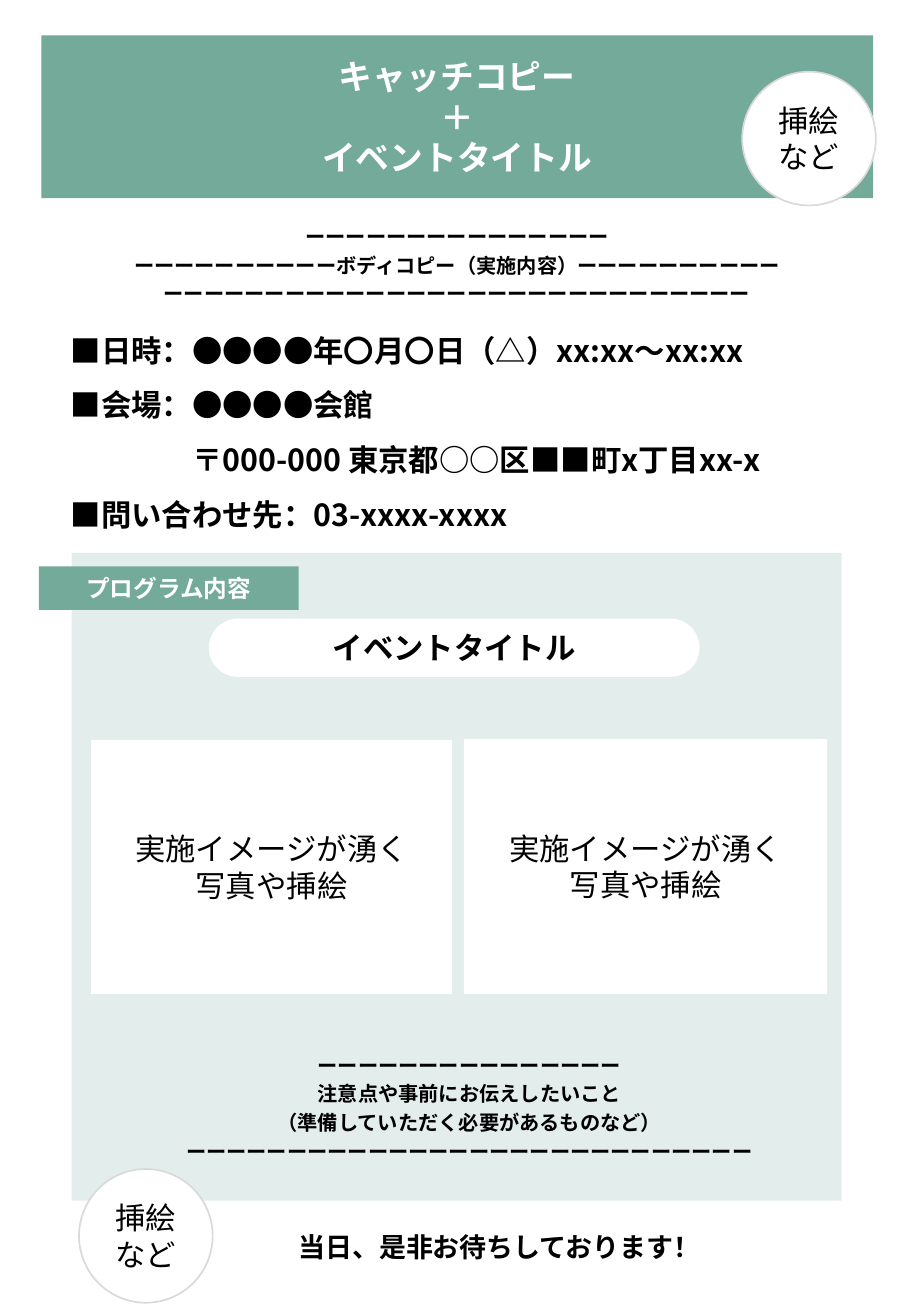
from dataclasses import dataclass

from lxml import etree
from pptx import Presentation
from pptx.dml.color import RGBColor
from pptx.enum.shapes import MSO_SHAPE
from pptx.enum.text import MSO_ANCHOR, MSO_AUTO_SIZE, PP_ALIGN
from pptx.oxml.ns import qn
from pptx.util import Inches, Length, Pt

RECT, ROUND, OVAL = MSO_SHAPE.RECTANGLE, MSO_SHAPE.ROUNDED_RECTANGLE, MSO_SHAPE.OVAL
LEFT, CENTER = PP_ALIGN.LEFT, PP_ALIGN.CENTER
TOP, MIDDLE = MSO_ANCHOR.TOP, MSO_ANCHOR.MIDDLE
FIXED = MSO_AUTO_SIZE.NONE

GREEN = RGBColor(0x74, 0xAA, 0x9A)
PALE = RGBColor(0xE3, 0xED, 0xEB)
GREY = RGBColor(0xD9, 0xD9, 0xD9)
WHITE = RGBColor(0xFF, 0xFF, 0xFF)
BLACK = RGBColor(0x00, 0x00, 0x00)

NOTO, LATIN = "Noto Sans CJK JP", "Calibri"
WIDTH, HEIGHT = Inches(7.5), Inches(10.83)
DASH = "ー"


@dataclass(frozen=True)
class Box:
    """A frame in percent of the slide's width (x, w) and height (y, h)."""
    x: float
    y: float
    w: float
    h: float

    def frame(self) -> tuple[int, int, int, int]:
        return (round(WIDTH * self.x / 100), round(HEIGHT * self.y / 100),
                round(WIDTH * self.w / 100), round(HEIGHT * self.h / 100))


@dataclass(frozen=True)
class Style:
    size: int
    color: RGBColor = BLACK
    bold: bool = True
    font: str = NOTO
    align: PP_ALIGN = CENTER
    anchor: MSO_ANCHOR = MIDDLE
    space: float | Length = 1.0
    inset: int | None = None


@dataclass(frozen=True)
class Block:
    kind: MSO_SHAPE
    box: Box
    fill: RGBColor
    lines: tuple[str, ...] = ()
    style: Style | None = None
    edge: RGBColor | None = None


@dataclass(frozen=True)
class Note:
    box: Box
    lines: tuple[str, ...]
    style: Style


HEAD = Style(20, WHITE)
FACTS = Style(18, align=LEFT, anchor=TOP, space=1.5, inset=3)
COPY = Style(12, anchor=TOP, space=Pt(17), inset=2)
HINT = Style(12, anchor=TOP, space=Pt(17))
CLOSE = Style(16, align=LEFT, anchor=TOP, space=Pt(17), inset=2)
PILL = Style(18, font=LATIN)
TAG = Style(14, WHITE)
PLAIN = Style(18, bold=False, font=LATIN)

TITLE_BOX = Box(4.53, 2.68, 91.33, 12.37)
TITLE = ("キャッチコピー", "＋", "イベントタイトル")
FACT_BOX = Box(7.2, 23.45, 88.67, 17.08)
FACT_LINES = (
    "■日時：●●●●年〇月〇日（△）xx:xx～xx:xx",
    "■会場：●●●●会館",
    "〒000-000 東京都○○区■■町x丁目xx-x",
    "■問い合わせ先：03-xxxx-xxxx",
)
ADDRESS = 2  # the line set in under the venue
PHOTO = ("実施イメージが湧く", "写真や挿絵")
ART = ("挿絵など",)

BLOCKS = (
    Block(RECT, Box(7.87, 42.01, 84.53, 49.22), PALE),
    Block(ROUND, Box(22.93, 47, 53.87, 4.43), WHITE, ("イベントタイトル",), PILL),
    Block(RECT, Box(4.27, 43.03, 28.53, 3.32), GREEN, ("プログラム内容",), TAG),
    Block(RECT, Box(10, 56.23, 39.6, 19.3), WHITE, PHOTO, PLAIN),
    Block(RECT, Box(50.93, 56.14, 39.87, 19.39), WHITE, PHOTO, PLAIN),
    Block(OVAL, Box(81.47, 5.45, 14.67, 10.16), WHITE, ART, PLAIN, GREY),
    Block(OVAL, Box(8.67, 88.83, 14.67, 10.16), WHITE, ART, PLAIN, GREY),
)
NOTES = (
    Note(Box(4.53, 16.44, 91.33, 7.02),
         (DASH * 15, DASH * 10 + "ボディコピー（実施内容）" + DASH * 10, DASH * 29), COPY),
    Note(Box(6.8, 79.22, 89.47, 9.6),
         (DASH * 15, "注意点や事前にお伝えしたいこと",
          "（準備していただく必要があるものなど）", DASH * 28), HINT),
    Note(Box(32.4, 93.54, 65.33, 2.77), ("当日、是非お待ちしております！",), CLOSE),
)


def write(frame, lines: tuple[str, ...], style: Style) -> None:
    frame.word_wrap = True
    frame.auto_size = FIXED
    frame.vertical_anchor = style.anchor
    if style.inset is not None:
        frame.margin_left = frame.margin_right = Pt(style.inset)
        frame.margin_top = frame.margin_bottom = Pt(style.inset)
    for i, line in enumerate(lines):
        para = frame.paragraphs[0] if i == 0 else frame.add_paragraph()
        para.alignment = style.align
        para.line_spacing = style.space
        para.space_before = para.space_after = Pt(0)
        run = para.add_run()
        run.text = line
        font = run.font
        font.name, font.size, font.bold = style.font, Pt(style.size), style.bold
        font.color.rgb = style.color
        etree.SubElement(run._r.get_or_add_rPr(), qn("a:ea"), typeface=NOTO)


def place(shape, box: Box) -> None:
    shape.left, shape.top, shape.width, shape.height = box.frame()


def set_in(para, left: Length) -> None:
    """Drop the bullet and start the line at the given indent."""
    props = para._p.get_or_add_pPr()
    props.set("marL", str(int(left)))
    props.set("indent", "0")
    etree.SubElement(props, qn("a:buNone"))


def draw_block(slide, block: Block) -> None:
    shape = slide.shapes.add_shape(block.kind, *block.box.frame())
    shape.shadow.inherit = False
    shape.fill.solid()
    shape.fill.fore_color.rgb = block.fill
    if block.edge is None:
        shape.line.fill.background()
    else:
        shape.line.color.rgb = block.edge
        shape.line.width = Pt(1)
    if block.kind == ROUND:
        shape.adjustments[0] = 0.5
    if block.style:
        write(shape.text_frame, block.lines, block.style)


def draw_note(slide, note: Note) -> None:
    area = slide.shapes.add_textbox(*note.box.frame())
    write(area.text_frame, note.lines, note.style)


def draw_title(slide) -> None:
    title = slide.shapes.title
    place(title, TITLE_BOX)
    title.fill.solid()
    title.fill.fore_color.rgb = GREEN
    write(title.text_frame, TITLE, HEAD)


def draw_facts(slide) -> None:
    body = slide.placeholders[1]
    place(body, FACT_BOX)
    write(body.text_frame, FACT_LINES, FACTS)
    for i, para in enumerate(body.text_frame.paragraphs):
        set_in(para, Pt(4 * FACTS.size if i == ADDRESS else 0))


def main() -> None:
    deck = Presentation()
    deck.slide_width, deck.slide_height = WIDTH, HEIGHT
    slide = deck.slides.add_slide(deck.slide_layouts[1])
    draw_title(slide)
    draw_facts(slide)
    for block in BLOCKS:
        draw_block(slide, block)
    for note in NOTES:
        draw_note(slide, note)
    deck.save("out.pptx")


if __name__ == "__main__":
    main()
